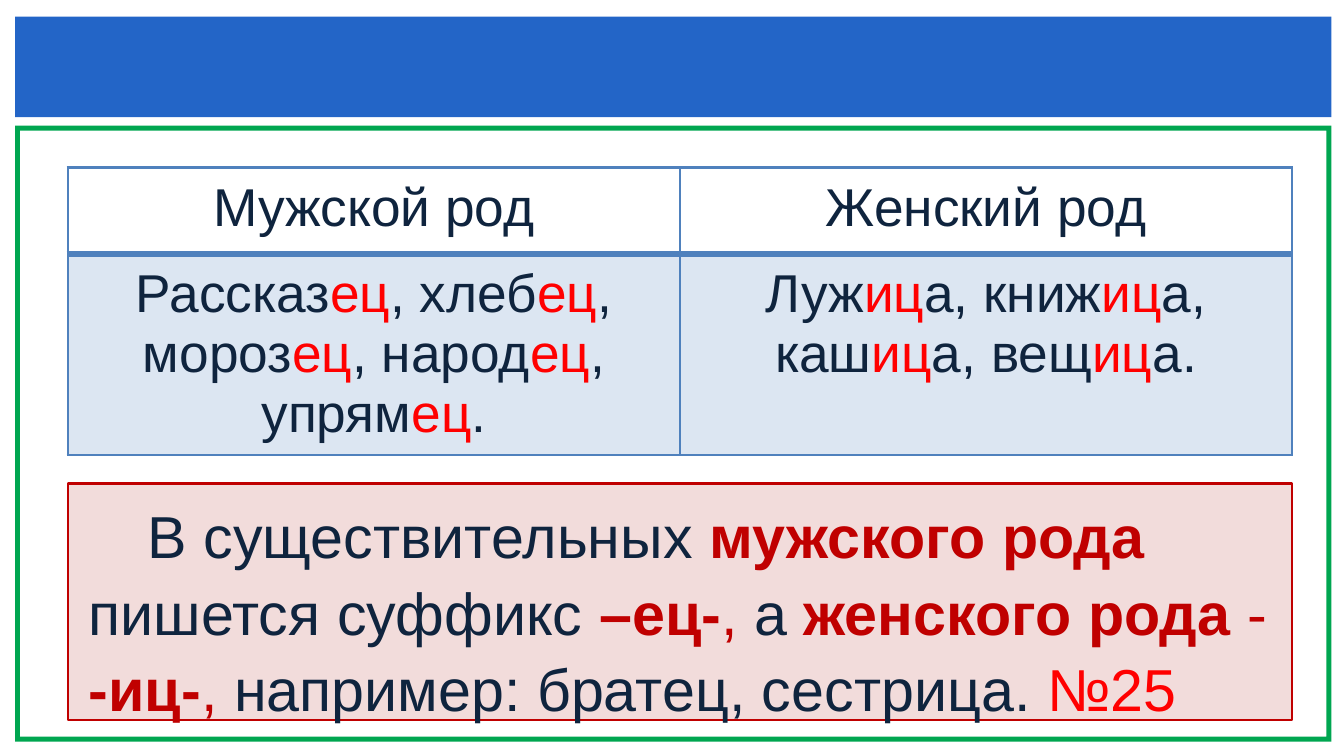
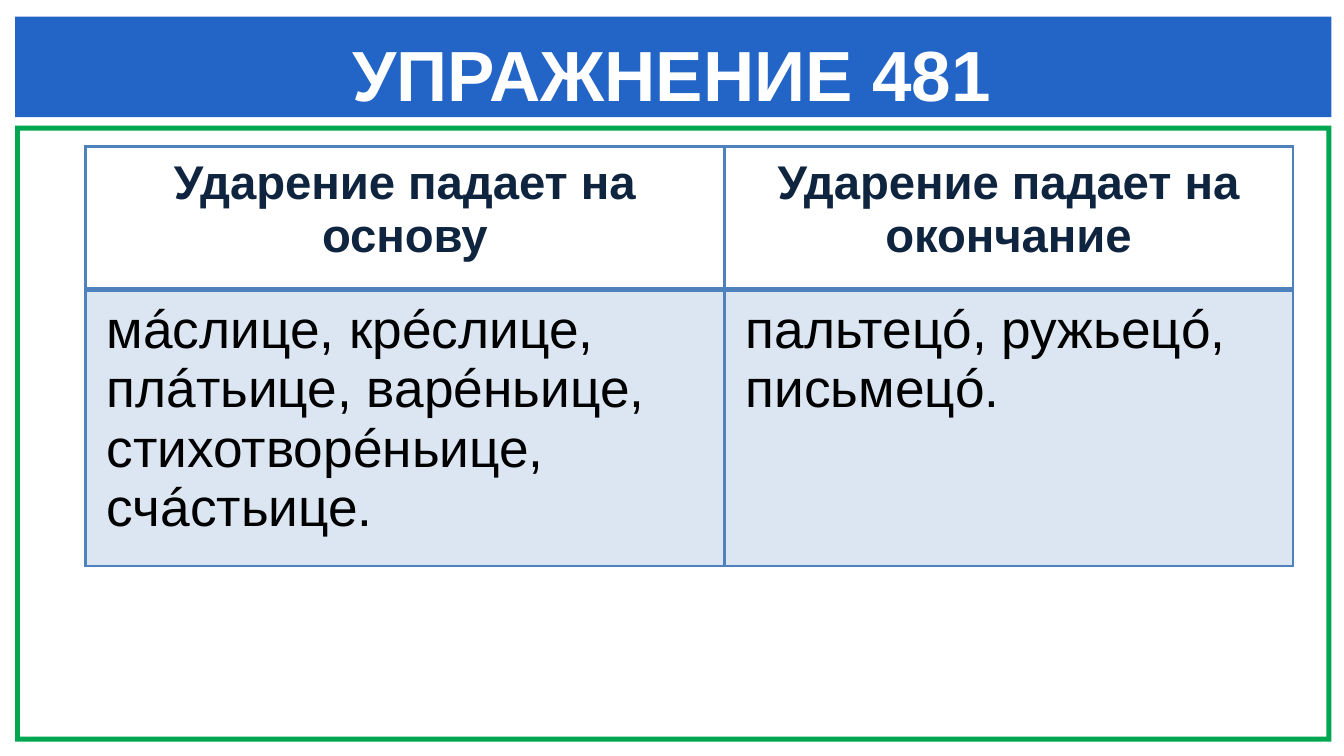
from lxml import etree
from pptx import Presentation
from pptx.dml.color import RGBColor
from pptx.enum.shapes import MSO_SHAPE
from pptx.enum.text import MSO_ANCHOR, PP_ALIGN
from pptx.oxml.ns import qn
from pptx.util import Cm, Pt

RECTANGLE, FRAME = MSO_SHAPE.RECTANGLE, MSO_SHAPE.FRAME
LEFT, CENTER = PP_ALIGN.LEFT, PP_ALIGN.CENTER
TOP = MSO_ANCHOR.TOP

# Colours and font
WHITE = RGBColor(0xFF, 0xFF, 0xFF)
BLACK = RGBColor(0x00, 0x00, 0x00)
NAVY = RGBColor(0x0F, 0x24, 0x3E)
RED = RGBColor(0xFF, 0x00, 0x00)
DARK_RED = RGBColor(0xC0, 0x00, 0x00)
PINK = RGBColor(0xF2, 0xDC, 0xDB)
BAND_BLUE = RGBColor(0x23, 0x65, 0xC7)
FRAME_GREEN = RGBColor(0x00, 0xA6, 0x50)
GRID_BLUE = RGBColor(0x4F, 0x81, 0xBD)
CELL_BLUE = RGBColor(0xDC, 0xE6, 0xF2)
FONT = "Arial"

# Shared layout, in centimetres
SLIDE_SIZE = (16.03, 9.02)
BAND = (0.18, 0.2, 15.7, 1.2)
PAGE_FRAME = (0.18, 1.5, 15.7, 7.35)
FRAME_THICKNESS = 0.06
TITLE = (0.84, 0.36, 14.35, 1.02)


def mark_suffixes(text):
    """Turn 'stem|suffix|stem' into runs with red suffixes."""
    return [(part, RED if index % 2 else NAVY, False)
            for index, part in enumerate(text.split("|"))]


class Deck:
    def __init__(self):
        self.presentation = Presentation()
        self.presentation.slide_width, self.presentation.slide_height = map(Cm, SLIDE_SIZE)
        self.slide = None

    def add_slide(self, title=None):
        self.slide = self.presentation.slides.add_slide(self.presentation.slide_layouts[6])
        page_frame = self.add_box(FRAME, PAGE_FRAME, FRAME_GREEN)
        page_frame.adjustments[0] = FRAME_THICKNESS / PAGE_FRAME[3]
        self.add_box(RECTANGLE, BAND, BAND_BLUE)
        if title:
            self.add_title(title)

    def add_box(self, kind, area, fill, line=None):
        shape = self.slide.shapes.add_shape(kind, *map(Cm, area))
        shape.shadow.inherit = False
        shape.fill.solid()
        shape.fill.fore_color.rgb = fill
        if line is None:
            shape.line.fill.background()
        else:
            shape.line.color.rgb = line
            shape.line.width = Pt(0.75)
        return shape

    def add_title(self, title):
        frame = self.slide.shapes.add_textbox(*map(Cm, TITLE)).text_frame
        frame.margin_left = frame.margin_right = frame.margin_top = frame.margin_bottom = 0
        self.add_text(frame, [(title, WHITE, True)], 24, CENTER)

    def add_text(self, frame, runs, size, alignment):
        frame.word_wrap = True
        paragraph = frame.paragraphs[0]
        paragraph.alignment = alignment
        for text, color, bold in runs:
            run = paragraph.add_run()
            run.text = text
            run.font.name = FONT
            run.font.size = Pt(size)
            run.font.bold = bold
            run.font.color.rgb = color
        return paragraph

    def add_rule(self, area, runs, indent, tab):
        shape = self.add_box(RECTANGLE, area, PINK, DARK_RED)
        shape.text_frame.vertical_anchor = TOP
        paragraph = self.add_text(shape.text_frame, runs, 20, LEFT)
        paragraph.line_spacing = 1.08
        # First-line indent and tab stop
        properties = paragraph._p.get_or_add_pPr()
        properties.set("marL", "0")
        properties.set("indent", str(Cm(indent)))
        tabs = etree.SubElement(properties, qn("a:tabLst"))
        etree.SubElement(tabs, qn("a:tab"), pos=str(Cm(tab)), algn="l")

    def add_table(self, left, top, widths, heights, header, body, sizes, body_alignment):
        table = self.slide.shapes.add_table(
            2, len(widths), Cm(left), Cm(top), Cm(sum(widths)), Cm(sum(heights))).table
        table.first_row = table.horz_banding = False
        for column, width in zip(table.columns, widths):
            column.width = Cm(width)
        for row, height in zip(table.rows, heights):
            row.height = Cm(height)
        for index, (header_runs, body_runs) in enumerate(zip(header, body)):
            header_cell, body_cell = table.cell(0, index), table.cell(1, index)
            self.set_borders(header_cell, bottom=2)
            self.set_borders(body_cell, top=2)
            header_cell.fill.background()
            body_cell.fill.solid()
            body_cell.fill.fore_color.rgb = CELL_BLUE
            self.add_text(header_cell.text_frame, header_runs, sizes[0], CENTER)
            self.add_text(body_cell.text_frame, body_runs, sizes[1], body_alignment)

    def set_borders(self, cell, top=1, bottom=1):
        properties = cell._tc.get_or_add_tcPr()
        for side, width in (("L", 1), ("R", 1), ("T", top), ("B", bottom)):
            line = etree.SubElement(properties, qn("a:ln" + side), w=str(Pt(width)))
            fill = etree.SubElement(line, qn("a:solidFill"))
            etree.SubElement(fill, qn("a:srgbClr"), val=str(GRID_BLUE))


def main():
    deck = Deck()

    # Suffixes by gender
    deck.add_slide()
    deck.add_table(
        0.81, 2, (7.3, 7.3), (1.03, 2.4),
        [[(name, NAVY, False)] for name in ("Мужской род", "Женский род")],
        [mark_suffixes("Рассказ|ец|, хлеб|ец|, мороз|ец|, народ|ец|, упрям|ец|."),
         mark_suffixes("Луж|иц|а, книж|иц|а, каш|иц|а, вещ|иц|а.")],
        (18, 18), CENTER)
    deck.add_rule((0.81, 5.77, 14.6, 2.82), [
        ("В существительных ", NAVY, False),
        ("мужского рода ", DARK_RED, True),
        ("пишется суффикс ", NAVY, False),
        ("–ец-", DARK_RED, True),
        (", ", DARK_RED, False),
        ("а ", NAVY, False),
        ("женского рода ", DARK_RED, True),
        ("- ", DARK_RED, False),
        ("-иц-", DARK_RED, True),
        (", ", DARK_RED, False),
        ("например: братец, сестрица.\t", NAVY, False),
        ("№25", RED, False),
    ], indent=0.7, tab=12.2)

    # Exercise on stress
    deck.add_slide("УПРАЖНЕНИЕ 481")
    deck.add_table(
        1.02, 1.75, (7.62, 6.78), (1.7, 3.1),
        [[("Ударение падает на " + part, NAVY, True)] for part in ("основу", "окончание")],
        [[("мáслице, крéслице, плáтьице, варéньице, стихотворéньице, счáстьице.", BLACK, False)],
         [("пальтецó, ружьецó, письмецó.", BLACK, False)]],
        (16, 18), LEFT)

    deck.presentation.save("out.pptx")


if __name__ == "__main__":
    main()
